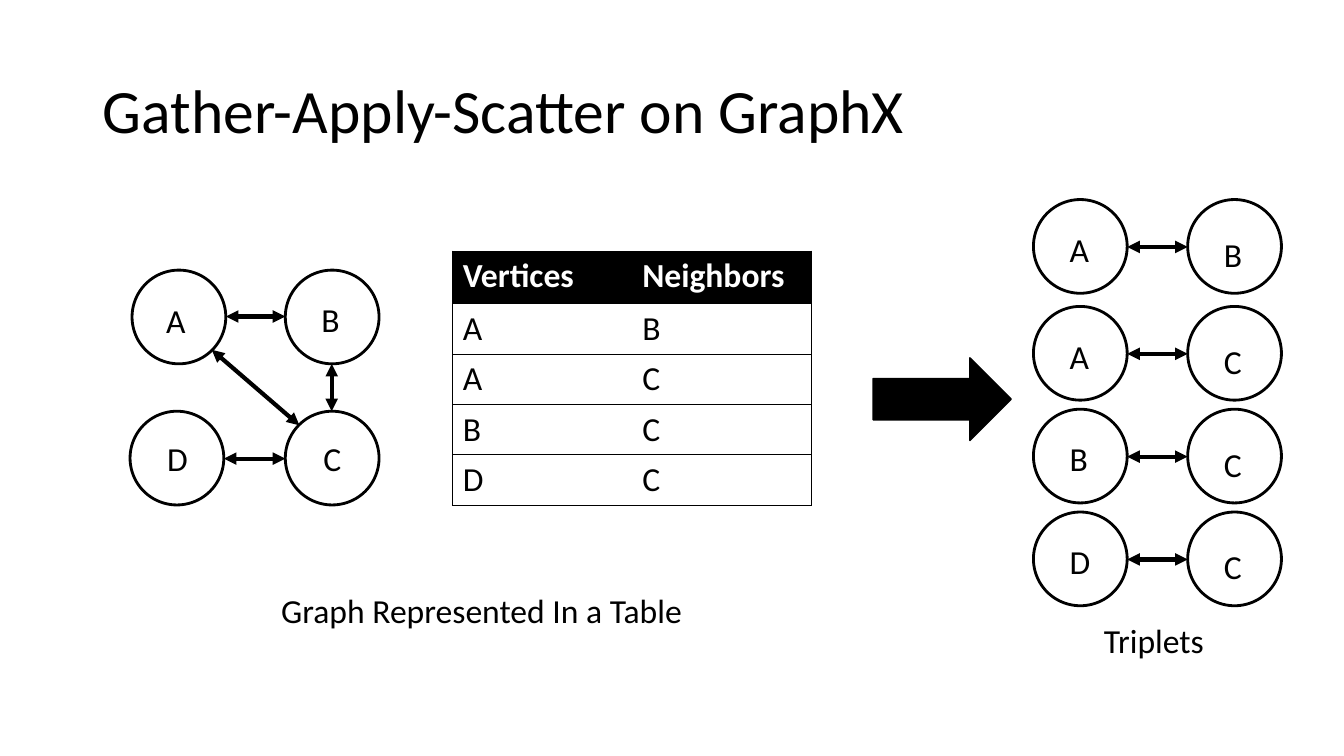
import pptx
import pptx.util
import pptx.dml.color
import pptx.enum.shapes
import pptx.enum.text
import pptx.oxml
import pptx.oxml.ns
import lxml.etree

Inches, Pt = pptx.util.Inches, pptx.util.Pt
MSO_SHAPE = pptx.enum.shapes.MSO_SHAPE
PP_ALIGN = pptx.enum.text.PP_ALIGN
MSO_ANCHOR = pptx.enum.text.MSO_ANCHOR
BLACK = pptx.dml.color.RGBColor(0x00, 0x00, 0x00)
WHITE = pptx.dml.color.RGBColor(0xFF, 0xFF, 0xFF)
FONT = "Calibri"
NODE = 0.93  # circle diameter
NO_STYLE = "{2D5ABB26-0587-4C30-8999-92F81FD0307C}"

prs = pptx.Presentation()
prs.slide_width, prs.slide_height = Inches(13.33), Inches(7.5)
s = prs.slides.add_slide(prs.slide_layouts[5])


def add_label(text, x, y, w, wrap=False):
    tf = s.shapes.add_textbox(Inches(x), Inches(y), Inches(w), Inches(0.5)).text_frame
    tf.word_wrap = wrap
    p = tf.paragraphs[0]
    p.text = text
    p.font.name, p.font.size, p.font.color.rgb = FONT, Pt(24), BLACK


def add_edge(x1, y1, x2, y2):
    line = s.shapes.add_connector(pptx.enum.shapes.MSO_CONNECTOR.STRAIGHT,
                                  Inches(x1), Inches(y1), Inches(x2), Inches(y2))
    line.line.color.rgb, line.line.width = BLACK, Pt(3)
    ln = line.line._get_or_add_ln()
    for end in ("a:headEnd", "a:tailEnd"):
        lxml.etree.SubElement(ln, pptx.oxml.ns.qn(end), type="triangle")
    lxml.etree.SubElement(line._element.spPr, pptx.oxml.ns.qn("a:effectLst"))


# Title
title = s.shapes.title
title.left, title.top = Inches(0.92), Inches(0.4)
title.width, title.height = Inches(11.5), Inches(1.45)
tf = title.text_frame
tf.vertical_anchor = MSO_ANCHOR.MIDDLE
p = tf.paragraphs[0]
p.text = "Gather-Apply-Scatter on GraphX"
p.alignment, p.line_spacing = PP_ALIGN.LEFT, 0.9
p.font.name, p.font.size, p.font.color.rgb = FONT, Pt(44), BLACK

# Graph and triplet nodes: name, left, top, label offset
nodes = [("A", 1.31, 2.68, 0.24, 0.25), ("B", 2.83, 2.68, 0.26, 0.24),
         ("D", 1.29, 4.08, 0.27, 0.22), ("C", 2.83, 4.08, 0.28, 0.22)]
edges = [(2.24, 3.14, 2.83, 3.14), (2.1, 3.47, 2.97, 4.22),
         (3.29, 3.61, 3.29, 4.08), (2.22, 4.55, 2.83, 4.55)]
triplets = [("A", "B", 1.98), ("A", "C", 3.04), ("B", "C", 4.06), ("D", "C", 5.08)]
for source, target, y in triplets:
    nodes += [(source, 10.25, y, 0.26, 0.24), (target, 11.78, y, 0.26, 0.29)]
    edges.append((11.18, y + 0.47, 11.78, y + 0.47))

for name, x, y, dx, dy in nodes:
    sp = s.shapes.add_shape(MSO_SHAPE.OVAL, Inches(x), Inches(y), Inches(NODE), Inches(NODE))
    sp.shadow.inherit = False
    sp.fill.background()
    sp.line.color.rgb, sp.line.width = BLACK, Pt(2)
    add_label(name, x + dx, y + dy, 0.4)
for edge in edges:
    add_edge(*edge)

# Table with one row per edge
rows = [("Vertices", "Neighbors"), ("A", "B"), ("A", "C"), ("B", "C"), ("D", "C")]
table = s.shapes.add_table(len(rows), 2, Inches(4.49), Inches(2.49),
                           Inches(3.56), Inches(2.52)).table
table.horz_banding = False
table._tbl.tblPr[0].text = NO_STYLE
for i, row in enumerate(rows):
    table.rows[i].height = Inches(0.5 if i else 0.52)
    for j, text in enumerate(row):
        cell = table.cell(i, j)
        cell.fill.solid()
        cell.fill.fore_color.rgb = WHITE if i else BLACK
        p = cell.text_frame.paragraphs[0]
        p.text = text
        p.font.name, p.font.size, p.font.bold = FONT, Pt(24), i == 0
        p.font.color.rgb = BLACK if i else WHITE
        # Outer and horizontal borders, placed ahead of the fill
        for k, side in enumerate(("LR"[j], "T", "B")):
            cell._tc.tcPr.insert(k, pptx.oxml.parse_xml(
                f'<a:ln{side} {pptx.oxml.ns.nsdecls("a")} w="6350"><a:solidFill>'
                f'<a:srgbClr val="{BLACK}"/></a:solidFill></a:ln{side}>'))

# Arrow from table to triplets
sp = s.shapes.add_shape(MSO_SHAPE.RIGHT_ARROW, Inches(8.66), Inches(3.55),
                        Inches(1.37), Inches(0.82))
sp.shadow.inherit = False
sp.fill.solid()
sp.fill.fore_color.rgb = BLACK
sp.line.color.rgb, sp.line.width = BLACK, Pt(1)

# Captions
add_label("Graph Represented In a Table", 2.69, 5.8, 5.98, wrap=True)
add_label("Triplets", 10.85, 6.1, 1.46, wrap=True)

prs.save("out.pptx")
